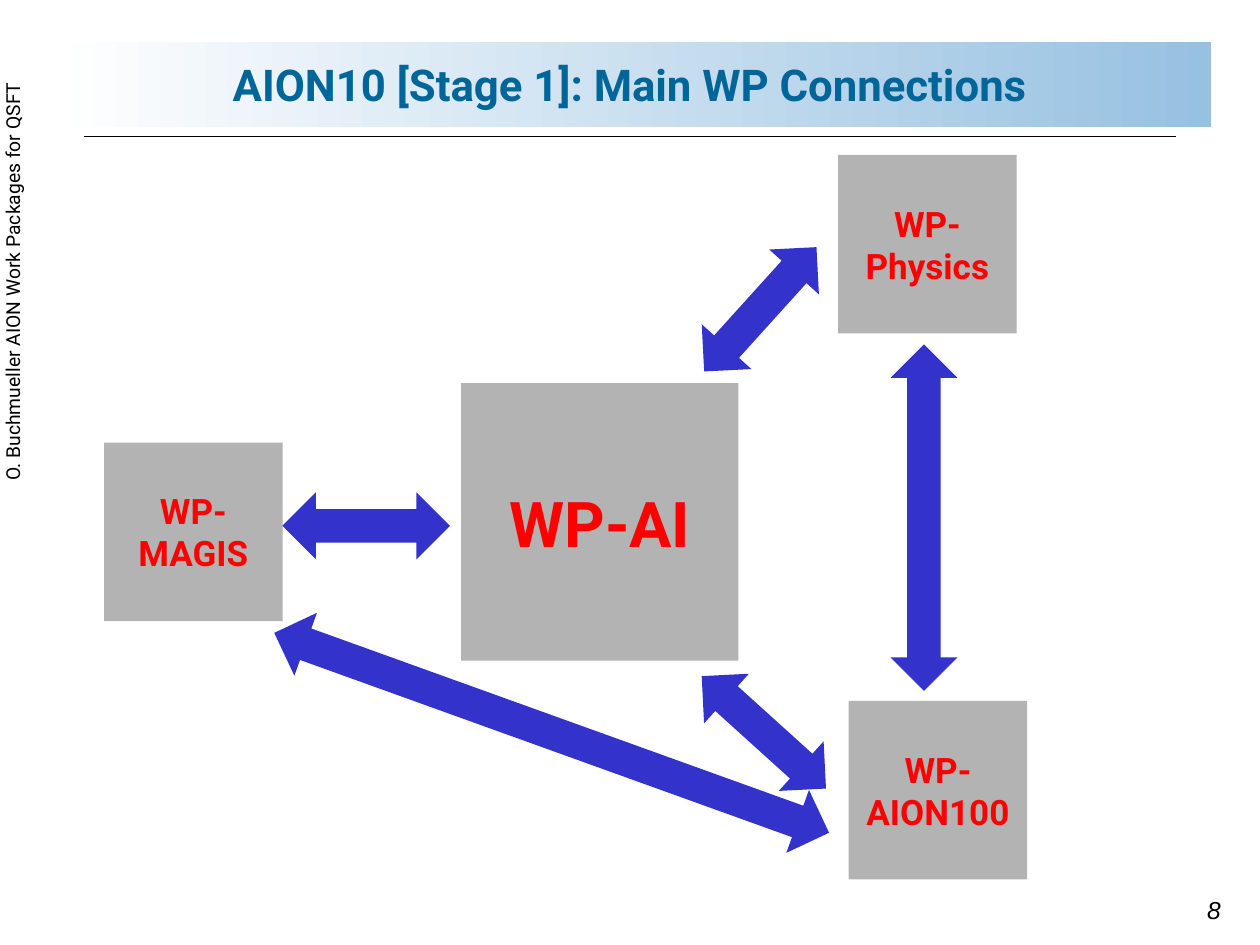
"""Build the slide of AION10 work package connections."""
import pptx
import pptx.util
import pptx.dml.color
import pptx.enum.shapes
import pptx.enum.text
import pptx.oxml
import pptx.oxml.ns

Pt = pptx.util.Pt
Shape = pptx.enum.shapes.MSO_SHAPE
Align = pptx.enum.text.PP_ALIGN
Anchor = pptx.enum.text.MSO_ANCHOR

theme = {
    "white": "FFFFFF", "sky": "97C1E1", "title": "006699", "black": "000000",
    "box": "B3B3B3", "label": "FF0000", "arrow": "3333CC",
    "sans": "Roboto", "plain": "Arial",
    "head": 25, "main": 36, "part": 20, "side": 11, "page": 14,
}


def rgb(name):
    return pptx.dml.color.RGBColor.from_string(theme[name])


def style(shape, size, color, face="sans", bold=False, align=Align.LEFT, anchor=Anchor.TOP):
    frame = shape.text_frame
    frame.word_wrap = True
    frame.vertical_anchor = anchor
    frame.margin_left = frame.margin_right = Pt(6.5)
    frame.margin_top = frame.margin_bottom = Pt(3)
    for para in frame.paragraphs:
        para.alignment = align
        for run in para.runs:
            run.font.size = Pt(theme[size])
            run.font.name = theme[face]
            run.font.bold = bold
            run.font.color.rgb = rgb(color)


deck = pptx.Presentation()
deck.slide_width, deck.slide_height = Pt(720), Pt(540)
slide = deck.slides.add_slide(deck.slide_layouts[5])
shapes = slide.shapes

band = shapes.add_shape(Shape.RECTANGLE, Pt(28), Pt(24), Pt(664), Pt(48.8))
band.shadow.inherit = False
band.line.fill.background()
band.fill.gradient()
band.fill.gradient_angle = 0
for stop, name in zip(band.fill.gradient_stops, ("white", "sky")):
    stop.color.rgb = rgb(name)

rule = shapes.add_connector(
    pptx.enum.shapes.MSO_CONNECTOR.STRAIGHT, Pt(48), Pt(77.75), Pt(672), Pt(77.75))
rule.line.color.rgb = rgb("black")
rule.line.width = Pt(0.25)
pptx.oxml.ns.qn("a:effectLst")
rule._element.spPr.append(pptx.oxml.parse_xml(
    '<a:effectLst xmlns:a="http://schemas.openxmlformats.org/drawingml/2006/main"/>'))

title = shapes.title
title.left, title.top, title.width, title.height = Pt(44), Pt(30.25), Pt(631.5), Pt(36)
title.text_frame.text = "AION10 [Stage 1]: Main WP Connections"
style(title, "head", "title", bold=True, align=Align.CENTER, anchor=Anchor.MIDDLE)
shapes._spTree.append(title._element)

side = shapes.add_textbox(Pt(-124.5), Pt(125.25), Pt(283.5), Pt(39.5))
side.rotation = 270
side.text_frame.text = "O. Buchmueller AION Work Packages for QSFT"
style(side, "side", "black")
side.text_frame.margin_left = Pt(12)

page = shapes.add_textbox(Pt(683.25), Pt(508.25), Pt(36), Pt(27.5))
page.text_frame.text = "8"
style(page, "page", "black", face="plain")
page.text_frame.paragraphs[0].runs[0].font.italic = True

boxes = [
    ("WP-AI", 263.5, 219, 158.5, "main"),
    ("WP-Physics", 479, 88.5, 102, "part"),
    ("WP-AION100", 485, 400.5, 102, "part"),
    ("WP-MAGIS", 59.5, 253, 102, "part"),
]
for text, left, top, edge, size in boxes:
    box = shapes.add_shape(Shape.RECTANGLE, Pt(left), Pt(top), Pt(edge), Pt(edge))
    box.shadow.inherit = False
    box.fill.solid()
    box.fill.fore_color.rgb = rgb("box")
    box.line.fill.background()
    box.text_frame.text = text
    style(box, size, "label", bold=True, align=Align.CENTER, anchor=Anchor.MIDDLE)

thick = 38.2
arrows = [
    (434.5, 176.75, 95.75, 312.1),
    (436.5, 418.5, 95.75, 42.1),
    (209.25, 300.5, 95.75, 0),
    (528, 295.75, 198, 270),
    (315.25, 418.75, 337, 199.8),
]
for mid, level, span, turn in arrows:
    arrow = shapes.add_shape(
        Shape.LEFT_RIGHT_ARROW, Pt(mid - span / 2), Pt(level - thick / 2), Pt(span), Pt(thick))
    arrow.rotation = turn
    arrow.shadow.inherit = False
    arrow.fill.solid()
    arrow.fill.fore_color.rgb = rgb("arrow")
    arrow.line.fill.background()

deck.save("out.pptx")
